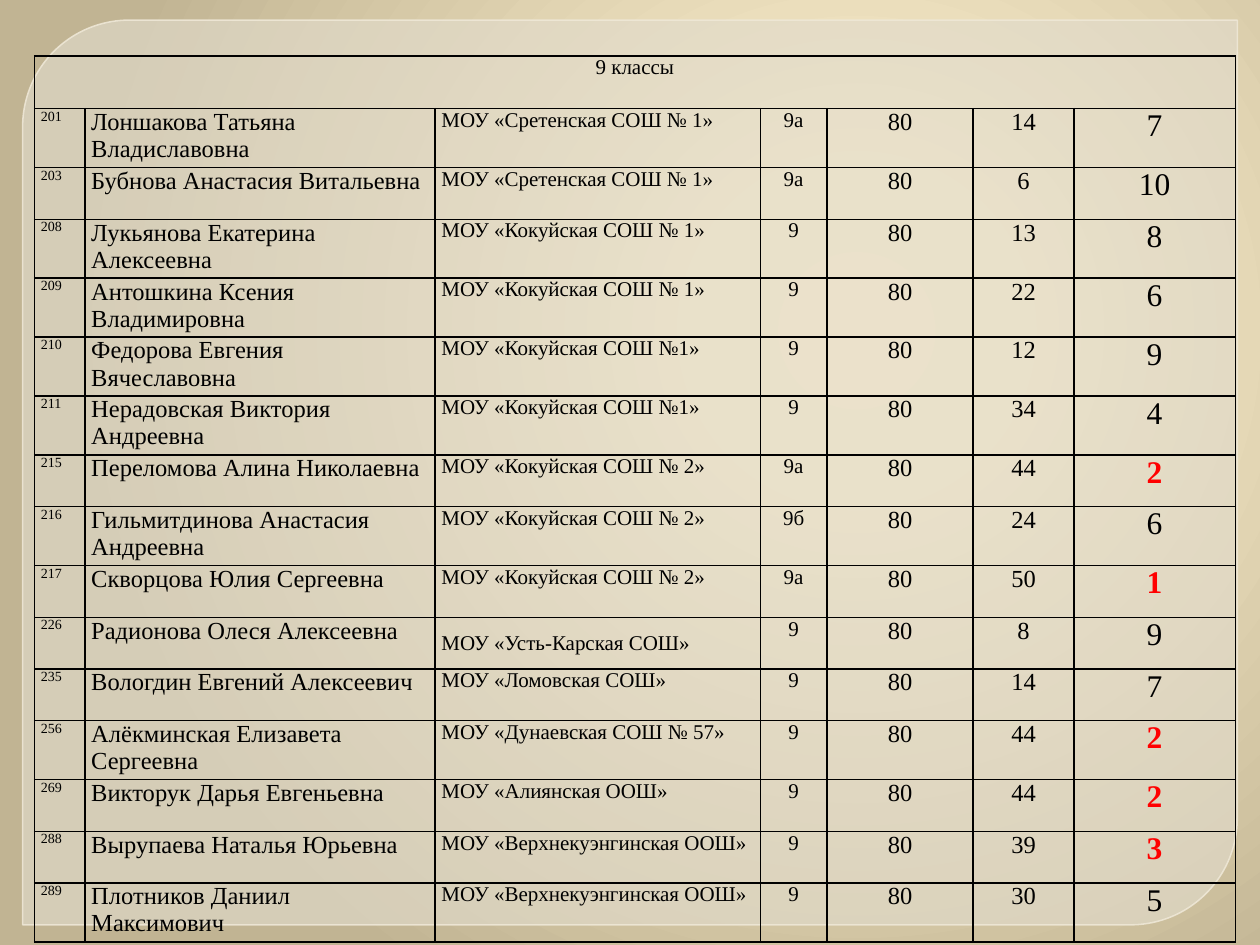
import pptx
import pptx.util
import pptx.dml.color
import pptx.enum.shapes
import pptx.enum.text
import pptx.oxml
import pptx.oxml.ns
import lxml.etree

RGBColor = pptx.dml.color.RGBColor
BLACK = RGBColor(0x00, 0x00, 0x00)
RED = RGBColor(0xFF, 0x00, 0x00)
PANEL_FILL = RGBColor(0xE1, 0xDB, 0xCB)
PANEL_LINE = RGBColor(0xEF, 0xE8, 0xD7)
GLOW_STOPS = [
    (0, RGBColor(0xFE, 0xEF, 0xCB)),
    (20, RGBColor(0xFA, 0xED, 0xCA)),
    (100, RGBColor(0xC1, 0xB4, 0x93)),
]
FONT = "Times New Roman"
LEFT = pptx.enum.text.PP_ALIGN.LEFT
CENTER = pptx.enum.text.PP_ALIGN.CENTER
TITLE = "9 классы"
MAX_SCORE = "80"
COLUMN_SHARES = [4, 27.8, 25.8, 5.3, 11.6, 8, 12.8]
COLUMN_SIZES = [8, 14, 12, 12, 14, 14, 18]
COLUMN_ALIGNMENTS = [LEFT] * 3 + [CENTER] * 4
PRIZE_PLACES = {"1", "2", "3"}
CENTRED_SCHOOL = "МОУ «Усть-Карская СОШ»"
STUDENTS = [
    ("201", "Лоншакова Татьяна Владиславовна", "МОУ «Сретенская СОШ № 1»", "9а", "14", "7"),
    ("203", "Бубнова Анастасия Витальевна", "МОУ «Сретенская СОШ № 1»", "9а", "6", "10"),
    ("208", "Лукьянова Екатерина Алексеевна", "МОУ «Кокуйская СОШ № 1»", "9", "13", "8"),
    ("209", "Антошкина Ксения Владимировна", "МОУ «Кокуйская СОШ № 1»", "9", "22", "6"),
    ("210", "Федорова Евгения Вячеславовна", "МОУ «Кокуйская СОШ №1»", "9", "12", "9"),
    ("211", "Нерадовская Виктория Андреевна", "МОУ «Кокуйская СОШ №1»", "9", "34", "4"),
    ("215", "Переломова Алина Николаевна", "МОУ «Кокуйская СОШ № 2»", "9а", "44", "2"),
    ("216", "Гильмитдинова Анастасия Андреевна", "МОУ «Кокуйская СОШ № 2»", "9б", "24", "6"),
    ("217", "Скворцова Юлия Сергеевна", "МОУ «Кокуйская СОШ № 2»", "9а", "50", "1"),
    ("226", "Радионова Олеся Алексеевна", CENTRED_SCHOOL, "9", "8", "9"),
    ("235", "Вологдин Евгений Алексеевич", "МОУ «Ломовская СОШ»", "9", "14", "7"),
    ("256", "Алёкминская Елизавета Сергеевна", "МОУ «Дунаевская СОШ № 57»", "9", "44", "2"),
    ("269", "Викторук Дарья Евгеньевна", "МОУ «Алиянская ООШ»", "9", "44", "2"),
    ("288", "Вырупаева Наталья Юрьевна", "МОУ «Верхнекуэнгинская ООШ»", "9", "39", "3"),
    ("289", "Плотников Даниил Максимович", "МОУ «Верхнекуэнгинская ООШ»", "9", "30", "5"),
]
TWO_LINE_NUMBERS = {"201", "208", "209", "210", "211", "216", "256", "289"}
ROW_SHARES = [5.6] + [6.24 if student[0] in TWO_LINE_NUMBERS else 5.47 for student in STUDENTS]


def set_alpha(fill, percent):
    color = fill._xPr.find(".//" + pptx.oxml.ns.qn("a:srgbClr"))
    alpha = lxml.etree.SubElement(color, pptx.oxml.ns.qn("a:alpha"))
    alpha.set("val", str(percent * 1000))


def write_cell(cell, text, size, alignment, color=BLACK, bold=False):
    cell.margin_left = cell.margin_right = int(0.5 * column)
    cell.margin_top = cell.margin_bottom = 0
    cell.text = text
    paragraph = cell.text_frame.paragraphs[0]
    paragraph.alignment = alignment
    paragraph.font.name = FONT
    paragraph.font.size = pptx.util.Pt(size)
    paragraph.font.bold = bold
    paragraph.font.color.rgb = color
    properties = cell._tc.get_or_add_tcPr()
    for side in ("lnL", "lnR", "lnT", "lnB"):
        properties.append(pptx.oxml.parse_xml(
            f'<a:{side} {pptx.oxml.ns.nsdecls("a")} w="{pptx.util.Pt(1)}">'
            f'<a:solidFill><a:srgbClr val="{BLACK}"/></a:solidFill></a:{side}>'))
    cell.fill.background()


presentation = pptx.Presentation()
presentation.slide_width = pptx.util.Inches(10)
presentation.slide_height = pptx.util.Inches(7.5)
column = presentation.slide_width / 100
row = presentation.slide_height / 100
slide = presentation.slides.add_slide(presentation.slide_layouts[6])

slide.background.fill.gradient()
gradient = slide.element.find(".//" + pptx.oxml.ns.qn("a:gradFill"))
stops = "".join(
    f'<a:gs pos="{position * 1000}"><a:srgbClr val="{color}"/></a:gs>'
    for position, color in GLOW_STOPS)
gradient.getparent().replace(gradient, pptx.oxml.parse_xml(
    f'<a:gradFill {pptx.oxml.ns.nsdecls("a")} rotWithShape="1"><a:gsLst>{stops}</a:gsLst>'
    '<a:path path="circle"><a:fillToRect l="68000" t="35000" r="32000" b="65000"/>'
    '</a:path></a:gradFill>'))

panel = slide.shapes.add_shape(
    pptx.enum.shapes.MSO_SHAPE.ROUND_2_DIAG_RECTANGLE,
    int(1.8 * column), int(2.13 * row), int(96.4 * column), int(95.73 * row))
panel.adjustments[0] = 0.118
panel.adjustments[1] = 0
panel.shadow.inherit = False
panel.fill.solid()
panel.fill.fore_color.rgb = PANEL_FILL
set_alpha(panel.fill, 65)
panel.line.color.rgb = PANEL_LINE
panel.line.width = pptx.util.Pt(0.87)
set_alpha(panel.line.fill, 88)

table = slide.shapes.add_table(
    len(ROW_SHARES), len(COLUMN_SHARES), int(2.74 * column), int(5.9 * row),
    int(sum(COLUMN_SHARES) * column), int(sum(ROW_SHARES) * row)).table
table.first_row = False
table.horz_banding = False
for table_column, share in zip(table.columns, COLUMN_SHARES):
    table_column.width = int(share * column)
for table_row, share in zip(table.rows, ROW_SHARES):
    table_row.height = int(share * row)

for cell in table.rows[0].cells:
    write_cell(cell, "", 12, CENTER)
table.cell(0, 0).merge(table.cell(0, len(COLUMN_SHARES) - 1))
table.cell(0, 0).text_frame.paragraphs[0].add_run().text = TITLE

for row_index, (number, name, school, grade, score, place) in enumerate(STUDENTS, 1):
    values = [number, name, school, grade, MAX_SCORE, score, place]
    for column_index, value in enumerate(values):
        prize = column_index == len(values) - 1 and place in PRIZE_PLACES
        cell = table.cell(row_index, column_index)
        write_cell(cell, value, COLUMN_SIZES[column_index], COLUMN_ALIGNMENTS[column_index],
                   RED if prize else BLACK, prize)
        if value == CENTRED_SCHOOL:
            cell.vertical_anchor = pptx.enum.text.MSO_ANCHOR.MIDDLE

presentation.save("out.pptx")
